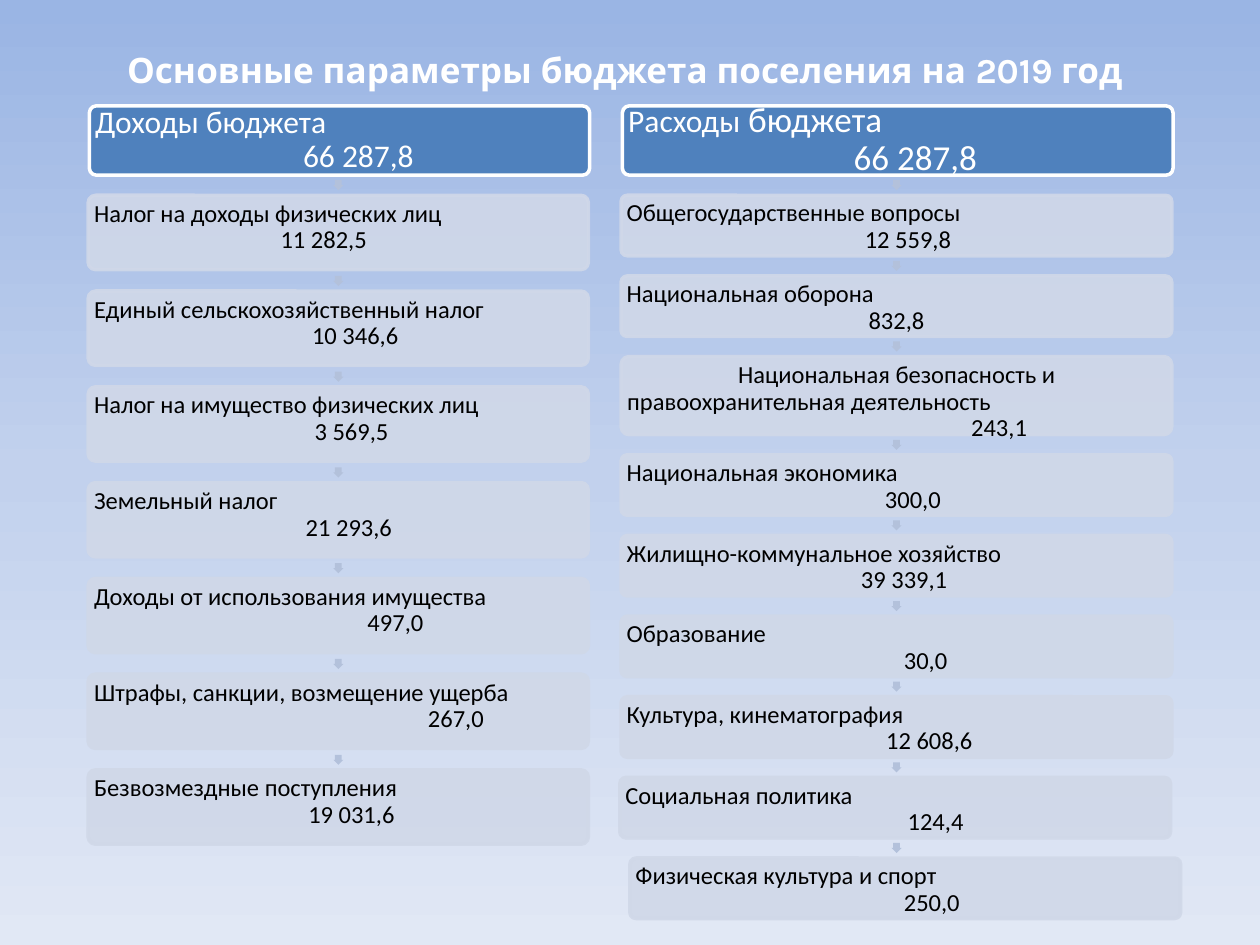
from copy import deepcopy

from pptx import Presentation
from pptx.dml.color import RGBColor
from pptx.enum import shapes, text
from pptx.oxml import ns, xmlchemy
from pptx.util import Inches, Pt

WHITE = RGBColor(0xFF, 0xFF, 0xFF)
BLACK = RGBColor(0, 0, 0)
HEADER_BLUE = RGBColor(0x4F, 0x81, 0xBD)
CARD_BLUE = RGBColor(0xD0, 0xD8, 0xE8)
ARROW_BLUE = RGBColor(0xB3, 0xC1, 0xDB)
BACKGROUND = [
    (0, RGBColor(0x9A, 0xB5, 0xE4)),
    (0.5, RGBColor(0xC2, 0xD1, 0xED)),
    (1, RGBColor(0xE1, 0xE8, 0xF5)),
]

HEADER_TOP, HEADER_HEIGHT = 0.84, 0.55
FIRST_CARD_TOP = 1.55
ARROW_SIZE = 0.08
INSET = 0.03
TEXT_OFFSET = 0.05  # inset plus the rounding of the corner

# Rows: label, value, left edge of the value, card height, shift of the card
COLUMNS = [
    {
        "left": 0.7, "width": 3.97, "gap": 0.17,
        "header": [("Доходы бюджета", 18)],
        "total": [("66 287,8", 18)], "total_left": 2.4,
        "rows": [
            ("Налог на доходы физических лиц", "11 282,5", 2.23, 0.59, 0),
            ("Единый сельскохозяйственный налог", "10 346,6", 2.48, 0.59, 0),
            ("Налог на имущество физических лиц", "3 569,5", 2.5, 0.59, 0),
            ("Земельный налог", "21 293,6", 2.43, 0.59, 0),
            ("Доходы от использования имущества", "497,0", 2.92, 0.59, 0),
            ("Штрафы, санкции, возмещение ущерба", "267,0", 3.4, 0.59, 0),
            ("Безвозмездные поступления", "19 031,6", 2.45, 0.59, 0),
        ],
    },
    {
        "left": 4.93, "width": 4.37, "gap": 0.16,
        "header": [("Расходы", 18), (" бюджета", 20)],
        "total": [("66 287,8", 20)], "total_left": 6.77,
        "rows": [
            ("Общегосударственные вопросы", "12 559,8", 6.87, 0.48, 0),
            ("Национальная оборона", "832,8", 6.9, 0.48, 0),
            ("Национальная безопасность и правоохранительная деятельность",
             "243,1", 7.71, 0.62, 0),
            ("Национальная экономика", "300,0", 7.03, 0.48, 0),
            ("Жилищно-коммунальное хозяйство", "39 339,1", 6.84, 0.48, 0),
            ("Образование", "30,0", 7.18, 0.48, 0),
            ("Культура, кинематография", "12 608,6", 7.04, 0.48, 0),
            ("Социальная политика", "124,4", 7.21, 0.48, -0.01),
            ("Физическая культура и спорт", "250,0", 7.18, 0.48, 0.07),
        ],
    },
]
FIRST_LINE_INDENTS = {COLUMNS[1]["rows"][2][0]: 0.88}


def write(paragraph, runs, color=BLACK, font="Calibri", bold=False,
          align=text.PP_ALIGN.LEFT, margin=0, indent=0):
    """Fill a paragraph with (text, size) runs; margin and indent are in inches."""
    paragraph.alignment = align
    paragraph.line_spacing = 0.9
    properties = paragraph._p.get_or_add_pPr()
    properties.set("marL", str(Inches(margin)))
    properties.set("indent", str(Inches(indent)))
    for words, size in runs:
        run = paragraph.add_run()
        run.text = words
        run.font.name = font
        run.font.size = Pt(size)
        run.font.bold = bold
        run.font.color.rgb = color


def add_block(kind, left, top, width, height, fill, line=None, opacity=100):
    """Add a preset shape with plain fill, optional line and opacity in percent."""
    shape = slide.shapes.add_shape(
        kind, Inches(left), Inches(top), Inches(width), Inches(height))
    shape.shadow.inherit = False
    shape.fill.solid()
    shape.fill.fore_color.rgb = fill
    if line is None:
        shape.line.fill.background()
    else:
        shape.line.color.rgb = line
        shape.line.width = Pt(2)
    if opacity < 100:
        for color in shape._element.spPr.iter(ns.qn("a:srgbClr")):
            alpha = xmlchemy.OxmlElement("a:alpha")
            alpha.set("val", str(opacity * 1000))
            color.append(alpha)
    frame = shape.text_frame
    frame.word_wrap = True
    frame.margin_left = frame.margin_right = Inches(INSET)
    frame.margin_top = frame.margin_bottom = Inches(INSET)
    return shape


presentation = Presentation()
presentation.slide_width = Inches(10)
presentation.slide_height = Inches(7.5)
slide = presentation.slides.add_slide(presentation.slide_layouts[6])

background = slide.background.fill
background.gradient()
background.gradient_angle = 270
stop_list = slide.element.find(".//" + ns.qn("a:gsLst"))
stop_list.insert(1, deepcopy(stop_list[0]))
for stop, (position, color) in zip(background.gradient_stops, BACKGROUND):
    stop.position = position
    stop.color.rgb = color

title = slide.shapes.add_textbox(Inches(0.46), Inches(0.26), Inches(9), Inches(0.63))
title.text_frame.word_wrap = True
title.text_frame.vertical_anchor = text.MSO_ANCHOR.MIDDLE
write(title.text_frame.paragraphs[0],
      [("Основные параметры бюджета поселения на 2019 год", 20)],
      color=WHITE, font="Karla", bold=True, align=text.PP_ALIGN.CENTER)

for column in COLUMNS:
    left, width = column["left"], column["width"]
    text_left = left + TEXT_OFFSET

    header = add_block(shapes.MSO_SHAPE.ROUNDED_RECTANGLE, left + 0.01, HEADER_TOP,
                       width, HEADER_HEIGHT, HEADER_BLUE, line=WHITE)
    header.adjustments[0] = 0.1
    header.text_frame.vertical_anchor = text.MSO_ANCHOR.MIDDLE
    write(header.text_frame.paragraphs[0], column["header"], color=WHITE)
    write(header.text_frame.add_paragraph(), column["total"], color=WHITE,
          margin=column["total_left"] - text_left)

    top = FIRST_CARD_TOP
    for label, value, value_left, height, shift in column["rows"]:
        arrow = add_block(shapes.MSO_SHAPE.RIGHT_ARROW,
                          left + (width - ARROW_SIZE) / 2, top - 0.12,
                          ARROW_SIZE, ARROW_SIZE, ARROW_BLUE)
        arrow.rotation = 90
        arrow.adjustments[0] = 0.67

        card = add_block(shapes.MSO_SHAPE.ROUNDED_RECTANGLE, left + shift, top,
                         width, height, CARD_BLUE, line=CARD_BLUE, opacity=90)
        card.adjustments[0] = 0.1
        card.text_frame.vertical_anchor = text.MSO_ANCHOR.TOP
        write(card.text_frame.paragraphs[0], [(label, 14)],
              indent=FIRST_LINE_INDENTS.get(label, 0))
        write(card.text_frame.add_paragraph(), [(value, 14)],
              margin=value_left - text_left - shift)
        top += height + column["gap"]

presentation.save("out.pptx")
